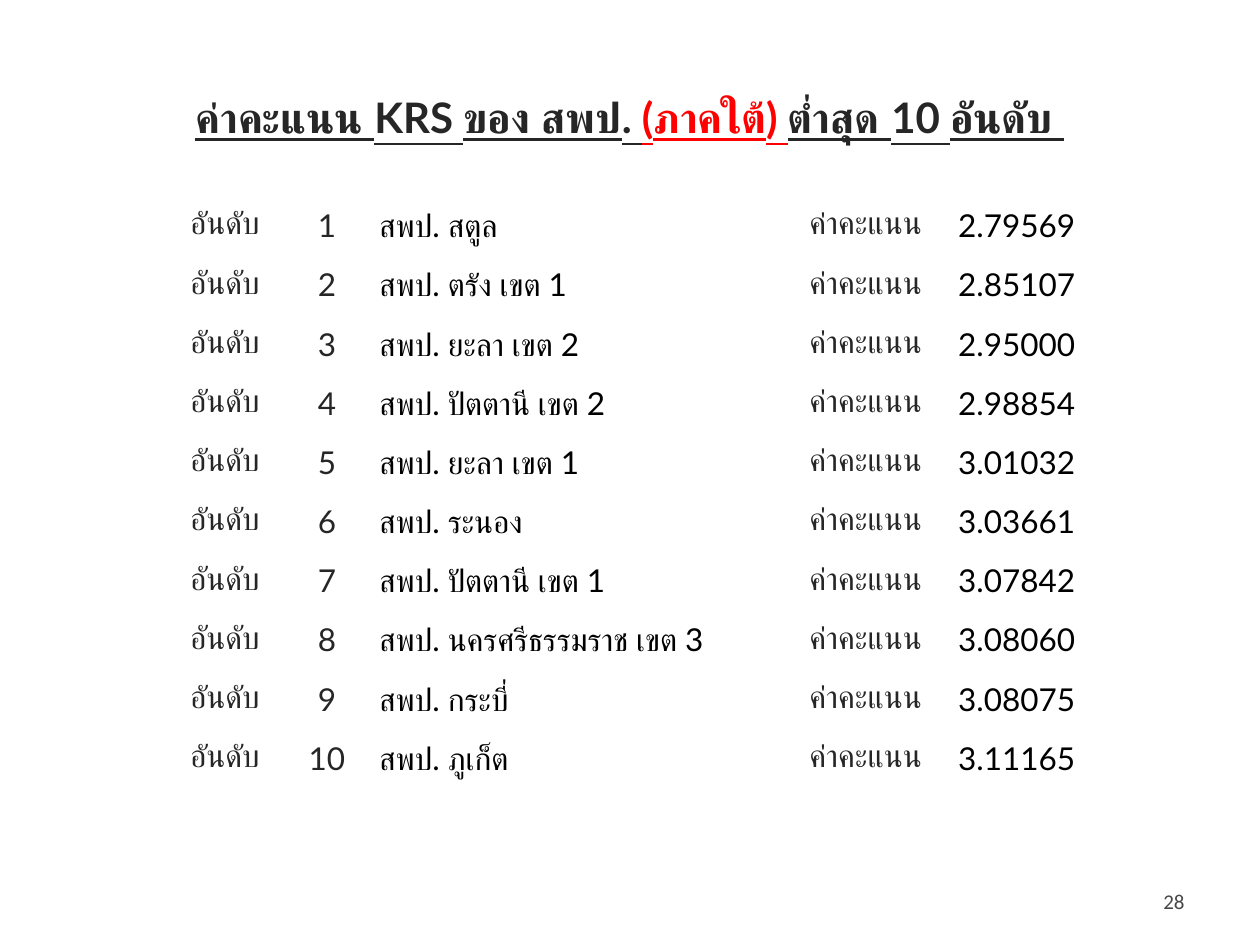
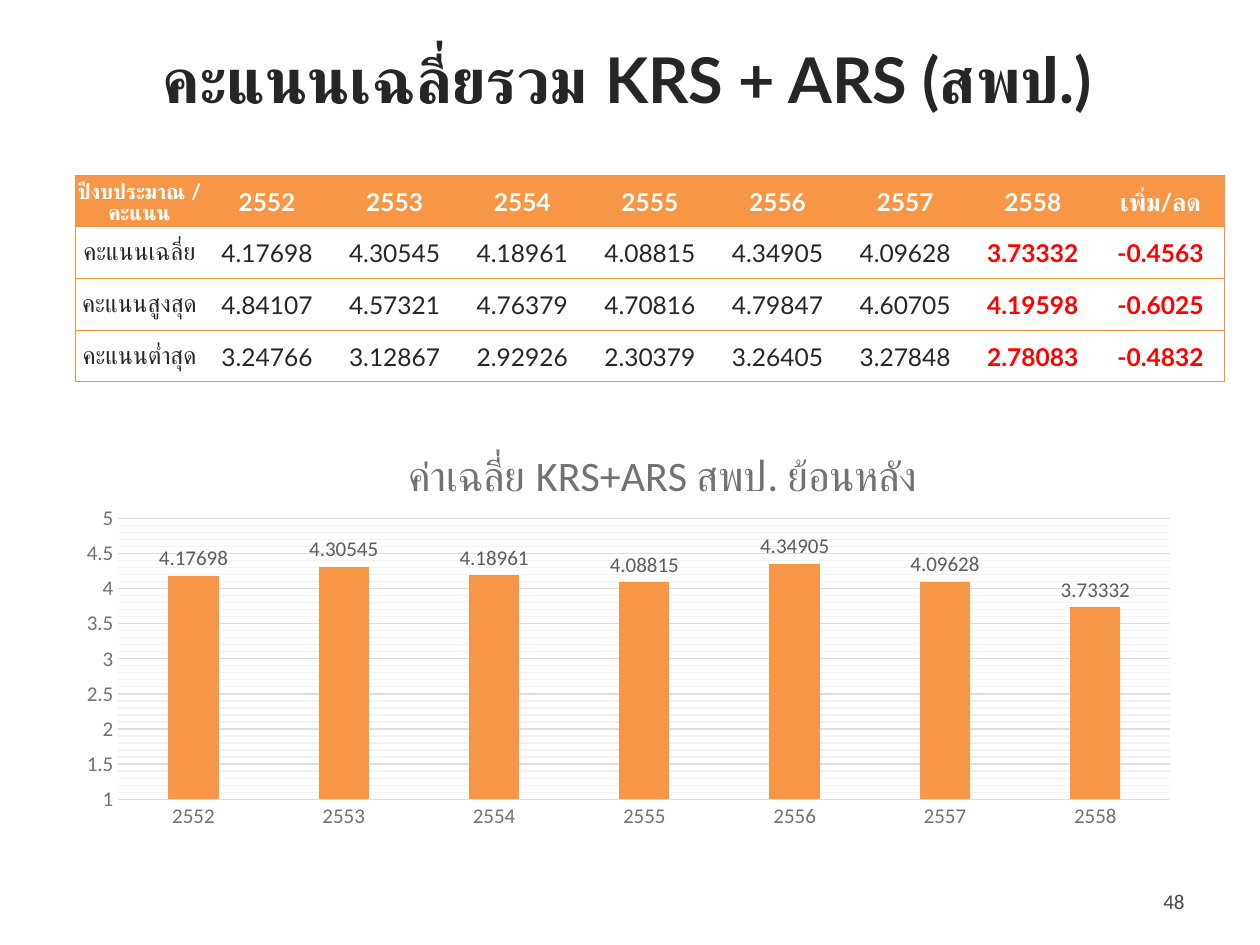
from dataclasses import dataclass
from typing import Optional

from lxml.etree import SubElement
from pptx import Presentation
from pptx.chart.data import CategoryChartData
from pptx.dml.color import RGBColor
from pptx.enum.chart import XL_CHART_TYPE, XL_LABEL_POSITION, XL_TICK_MARK
from pptx.enum.text import MSO_ANCHOR, PP_ALIGN
from pptx.oxml import parse_xml
from pptx.oxml.ns import nsdecls, qn
from pptx.util import Inches, Pt


@dataclass(frozen=True)
class Theme:
    text_font: str = "Lato"
    chart_font: str = "Calibri"
    ink: str = "262626"
    black: str = "000000"
    white: str = "FFFFFF"
    red: str = "FF0000"
    orange: str = "F79646"
    rule: str = "F69240"
    number: str = "474747"
    axis: str = "727272"
    label: str = "5C5C5C"
    grid: str = "DEDEDE"
    minor_grid: str = "F2F2F2"
    title_size: int = 36
    ranking_title_size: int = 24
    chart_title_size: int = 24
    ranking_size: int = 18
    table_size: int = 14
    small_size: int = 12
    chart_size: int = 10


THEME = Theme()
NO_STYLE = "{2D5ABB26-0587-4C30-8999-92F81FD0307C}"


@dataclass(frozen=True)
class Box:
    left: float
    top: float
    width: float
    height: float

    def emu(self) -> tuple:
        return tuple(map(Inches, (self.left, self.top, self.width, self.height)))


@dataclass(frozen=True)
class Span:
    text: str
    color: str = THEME.ink


@dataclass(frozen=True)
class CellText:
    text: str
    color: str = THEME.ink
    size: int = THEME.table_size
    bold: bool = False
    align: PP_ALIGN = PP_ALIGN.CENTER
    fill: Optional[str] = None


def set_font(font, name: str, size: int, color: str, bold: bool = False) -> None:
    font.name, font.size, font.bold = name, Pt(size), bold
    font.color.rgb = RGBColor.from_string(color)


def add_text(slide, box: Box, align: PP_ALIGN):
    """Add a middle-anchored text box and return its paragraph."""
    tf = slide.shapes.add_textbox(*box.emu()).text_frame
    tf.word_wrap = True
    tf.vertical_anchor = MSO_ANCHOR.MIDDLE
    p = tf.paragraphs[0]
    p.alignment = align
    return p


def add_title(slide, box: Box, spans: list[Span], size: int,
              underline: bool = False) -> None:
    p = add_text(slide, box, PP_ALIGN.CENTER)
    for span in spans:
        r = p.add_run()
        r.text = span.text
        set_font(r.font, THEME.text_font, size, span.color, True)
        r.font.underline = underline


def add_slide_number(slide, number: int) -> None:
    p = add_text(slide, Box(7.17, 6.95, 2.33, 0.4), PP_ALIGN.RIGHT)
    p.text = str(number)
    set_font(p.font, THEME.chart_font, THEME.small_size, THEME.number)


def fill_cell(cell, content: CellText) -> None:
    cell.margin_left = cell.margin_right = cell.margin_top = Inches(0.01)
    cell.margin_bottom = 0
    cell.vertical_anchor = MSO_ANCHOR.MIDDLE
    if content.fill:
        cell.fill.solid()
        cell.fill.fore_color.rgb = RGBColor.from_string(content.fill)
    else:
        cell.fill.background()
    p = cell.text_frame.paragraphs[0]
    p.text = content.text
    p.alignment = content.align
    set_font(p.font, THEME.text_font, content.size, content.color, content.bold)


def add_table(slide, left: float, top: float, widths: list[float],
              row_height: float, rows: list[list[CellText]]):
    box = Box(left, top, sum(widths), row_height * len(rows))
    frame = slide.shapes.add_table(len(rows), len(widths), *box.emu())
    next(frame.element.iter(qn("a:tableStyleId"))).text = NO_STYLE
    table = frame.table
    table.first_row = table.horz_banding = False
    for column, width in zip(table.columns, widths):
        column.width = Inches(width)
    for r, row in enumerate(rows):
        table.rows[r].height = Inches(row_height)
        for c, content in enumerate(row):
            fill_cell(table.cell(r, c), content)
    return table


def rule_rows(table) -> None:
    """Draw a line above and below each row and at the outer sides."""
    last = len(table.columns) - 1
    for row in table.rows:
        for c, cell in enumerate(row.cells):
            sides = ["L"] * (c == 0) + ["R"] * (c == last) + ["T", "B"]
            tc_pr = cell._tc.get_or_add_tcPr()
            for i, side in enumerate(sides):
                tc_pr.insert(i, parse_xml(
                    f'<a:ln{side} {nsdecls("a")} w="{Pt(0.75)}"><a:solidFill>'
                    f'<a:srgbClr val="{THEME.rule}"/></a:solidFill></a:ln{side}>'))


def set_layout(parent, index: int, **values: float) -> None:
    """Place a chart part by fractions of the chart area."""
    for old in parent.findall(qn("c:layout")):
        parent.remove(old)
    layout = parent.makeelement(qn("c:layout"))
    manual = SubElement(layout, qn("c:manualLayout"))
    if "w" in values:
        SubElement(manual, qn("c:layoutTarget")).set("val", "inner")
    for axis in "xy":
        SubElement(manual, qn(f"c:{axis}Mode")).set("val", "edge")
    for key, value in values.items():
        SubElement(manual, qn(f"c:{key}")).set("val", str(value))
    parent.insert(index, layout)


def set_line(line, color: str) -> None:
    line.color.rgb = RGBColor.from_string(color)
    line.width = Pt(0.75)


def add_minor_gridlines(axis, color: str) -> None:
    axis.has_minor_gridlines = True
    gridlines = axis._element.find(qn("c:minorGridlines"))
    gridlines.append(parse_xml(
        f'<c:spPr {nsdecls("c", "a")}><a:ln w="{Pt(0.75)}"><a:solidFill>'
        f'<a:srgbClr val="{color}"/></a:solidFill></a:ln></c:spPr>'))


def add_score_chart(slide, box: Box, title: str, years: list[str],
                    scores: list[float]) -> None:
    data = CategoryChartData(number_format="0.00000")
    data.categories = years
    data.add_series("Series 1", scores)
    chart = slide.shapes.add_chart(
        XL_CHART_TYPE.COLUMN_CLUSTERED, *box.emu(), data).chart
    set_font(chart.font, THEME.chart_font, THEME.chart_size, THEME.ink)
    chart.has_legend = False

    # Title
    p = chart.chart_title.text_frame.paragraphs[0]
    p.text = title
    set_font(p.font, THEME.chart_font, THEME.chart_title_size, THEME.axis)
    chart.chart_title.include_in_layout = False
    set_layout(chart.chart_title._element, 1, x=0.3, y=0.04)
    set_layout(chart._chartSpace.chart.plotArea, 0, x=0.05, y=0.23, w=0.93, h=0.68)

    # Axes
    for axis in (chart.category_axis, chart.value_axis):
        axis.major_tick_mark = axis.minor_tick_mark = XL_TICK_MARK.NONE
        set_font(axis.tick_labels.font, THEME.chart_font, THEME.small_size, THEME.axis)
    set_line(chart.category_axis.format.line, THEME.grid)
    values = chart.value_axis
    values.minimum_scale, values.maximum_scale = 1, 5
    values.major_unit, values.minor_unit = 0.5, 0.1
    values.tick_labels.number_format = "General"
    values.tick_labels.number_format_is_linked = False
    values.format.line.fill.background()
    set_line(values.major_gridlines.format.line, THEME.grid)
    add_minor_gridlines(values, THEME.minor_grid)

    # Bars and their labels
    plot = chart.plots[0]
    plot.gap_width, plot.vary_by_categories = 199, False
    fill = plot.series[0].format.fill
    fill.solid()
    fill.fore_color.rgb = RGBColor.from_string(THEME.orange)
    plot.has_data_labels = True
    labels = plot.data_labels
    labels.show_value = True
    labels.position = XL_LABEL_POSITION.OUTSIDE_END
    set_font(labels.font, THEME.chart_font, THEME.small_size, THEME.label)


LOWEST_SOUTH = [
    ("สตูล", "2.79569"), ("ตรัง เขต 1", "2.85107"),
    ("ยะลา เขต 2", "2.95000"), ("ปัตตานี เขต 2", "2.98854"),
    ("ยะลา เขต 1", "3.01032"), ("ระนอง", "3.03661"),
    ("ปัตตานี เขต 1", "3.07842"), ("นครศรีธรรมราช เขต 3", "3.08060"),
    ("กระบี่", "3.08075"), ("ภูเก็ต", "3.11165"),
]
YEARS = [str(year) for year in range(2552, 2559)]
AVERAGES = [4.17698, 4.30545, 4.18961, 4.08815, 4.34905, 4.09628, 3.73332]
HIGHEST = [4.84107, 4.57321, 4.76379, 4.70816, 4.79847, 4.60705, 4.19598]
LOWEST = [3.24766, 3.12867, 2.92926, 2.30379, 3.26405, 3.27848, 2.78083]
SCORE_ROWS = [("คะแนนเฉลี่ย", AVERAGES, "-0.4563"),
              ("คะแนนสูงสุด", HIGHEST, "-0.6025"),
              ("คะแนนต่ำสุด", LOWEST, "-0.4832")]


def ranking_row(rank: int, area: str, score: str) -> list[CellText]:
    size = THEME.ranking_size
    return [CellText("อันดับ", size=size), CellText(str(rank), size=size),
            CellText(f"สพป. {area}", THEME.black, size, align=PP_ALIGN.LEFT),
            CellText("ค่าคะแนน", size=size), CellText(score, THEME.black, size)]


def header_cell(text: str, size: int = THEME.table_size) -> CellText:
    return CellText(text, THEME.white, size, True, fill=THEME.orange)


def score_row(name: str, scores: list[float], change: str) -> list[CellText]:
    *earlier, latest = [f"{score:.5f}" for score in scores]
    return ([CellText(text) for text in (name, *earlier)]
            + [CellText(text, THEME.red, bold=True) for text in (latest, change)])


def build_ranking(slide) -> None:
    add_title(slide, Box(0.5, 0.3, 9, 1.25),
              [Span("ค่าคะแนน KRS ของ สพป. "), Span("(ภาคใต้) ", THEME.red),
               Span("ต่ำสุด 10 อันดับ ")], THEME.ranking_title_size, underline=True)
    add_slide_number(slide, 28)
    rows = [ranking_row(rank, *entry) for rank, entry in enumerate(LOWEST_SOUTH, 1)]
    add_table(slide, 1.38, 1.55, [0.81, 0.81, 3.27, 1.2, 1.2], 0.47, rows)


def build_averages(slide) -> None:
    add_title(slide, Box(0.48, 0, 9, 1.25),
              [Span("คะแนนเฉลี่ยรวม KRS + ARS (สพป.)")], THEME.title_size)
    add_slide_number(slide, 48)
    header = [header_cell("ปีงบประมาณ / คะแนน", THEME.small_size),
              *map(header_cell, YEARS), header_cell("เพิ่ม/ลด")]
    rows = [header] + [score_row(*row) for row in SCORE_ROWS]
    rule_rows(add_table(slide, 0.6, 1.39, [9.12 / len(header)] * len(header), 0.41, rows))
    add_score_chart(slide, Box(0.49, 3.36, 8.98, 3.28),
                    "ค่าเฉลี่ย KRS+ARS สพป. ย้อนหลัง", YEARS, AVERAGES)


def main() -> None:
    prs = Presentation()
    prs.slide_width, prs.slide_height = Inches(10), Inches(7.5)
    for build in (build_ranking, build_averages):
        build(prs.slides.add_slide(prs.slide_layouts[6]))
    prs.save("out.pptx")


if __name__ == "__main__":
    main()
